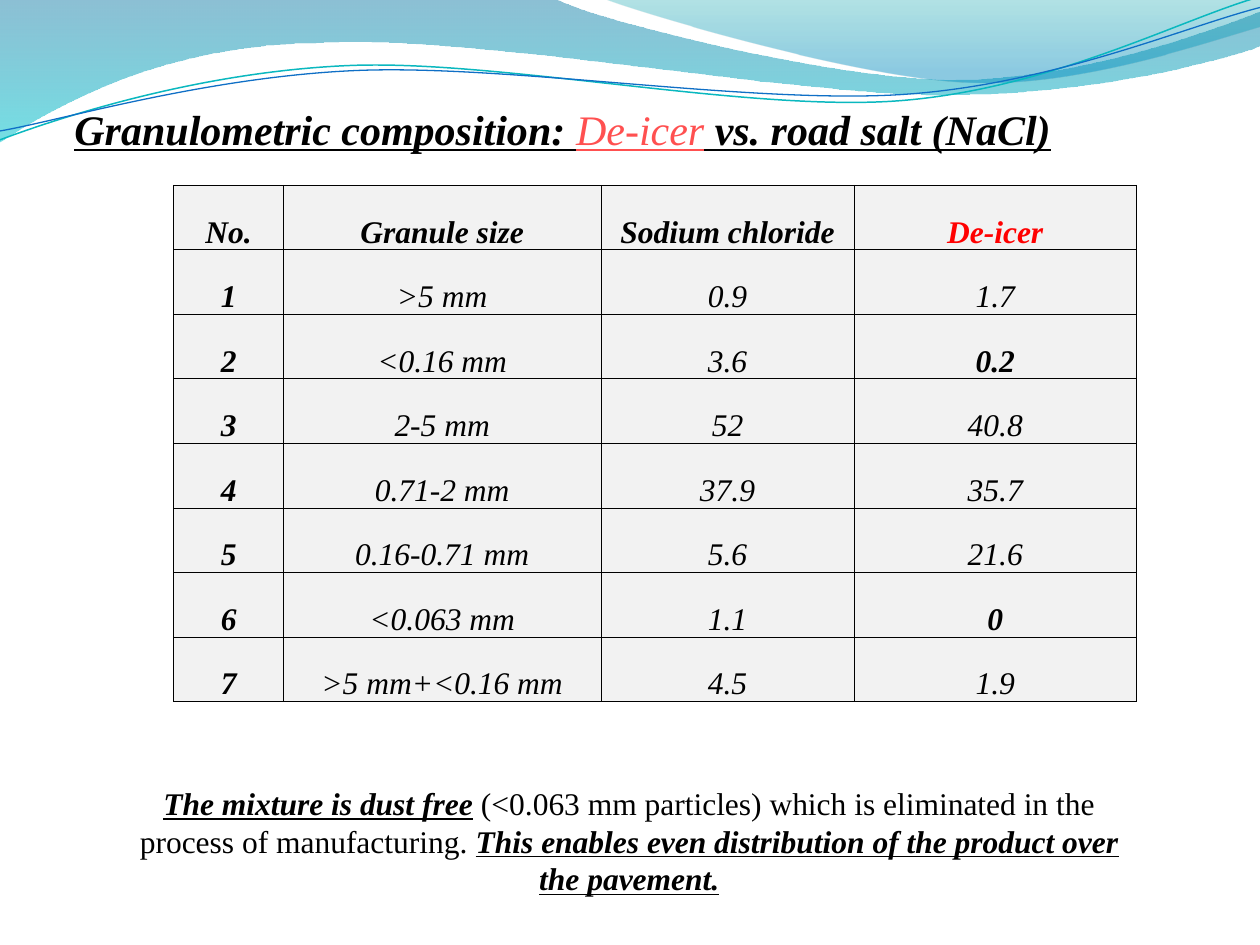
from math import cos, radians, sin

from lxml.etree import SubElement
from pptx import Presentation
from pptx.dml.color import RGBColor
from pptx.enum.text import MSO_ANCHOR, PP_ALIGN
from pptx.oxml import parse_xml
from pptx.oxml.ns import nsdecls, qn
from pptx.util import Inches, Pt

FONT = "Times New Roman"
BLACK = "000000"
LINE_TILT = 2.7  # degrees by which the wave lines rise to the right

# Wave outlines in inches: start point, then lines (x, y) and cubic curves (six values)
LEFT_WAVE = [(0, -0.01), (4.4, -0.01), (4.76, 0.17, 6.64, 0.63, 7.58, 0.63),
             (8.53, 0.63, 9.58, 0.26, 10, 0.09), (10.01, 0.36),
             (9.83, 0.44, 8.7, 0.76, 7.46, 0.75), (6.22, 0.75, 3.82, 0.28, 2.57, 0.34),
             (1.29, 0.35, 0.46, 0.83, -0.01, 1.13), (0, -0.01)]
RIGHT_WAVE = [(4.79, -0.01), (5.09, 0.11, 6.82, 0.62, 7.69, 0.65),
              (8.56, 0.69, 9.61, 0.32, 10, 0.21), (10, 0), (4.79, -0.01)]
TEAL_LINE = [(0, 1.11), (0.48, 0.93, 1.58, 0.57, 2.77, 0.52),
             (3.95, 0.47, 5.93, 0.89, 7.13, 0.8), (8.33, 0.71, 9.38, 0.15, 9.98, -0.02)]
BLUE_LINE = [(0, 1.04), (0.47, 0.96, 1.64, 0.61, 2.83, 0.56),
             (4.03, 0.51, 5.97, 0.83, 7.17, 0.75), (8.36, 0.67, 9.41, 0.21, 10, 0.06)]

GRANULES = [
    ("No.", "Granule size", "Sodium chloride", "De-icer"),
    ("1", ">5 mm", "0.9", "1.7"),
    ("2", "<0.16 mm", "3.6", "0.2"),
    ("3", "2-5 mm", "52", "40.8"),
    ("4", "0.71-2 mm", "37.9", "35.7"),
    ("5", "0.16-0.71 mm", "5.6", "21.6"),
    ("6", "<0.063 mm", "1.1", "0"),
    ("7", ">5 mm+<0.16 mm", "4.5", "1.9"),
]
COLUMN_WIDTHS = (0.87, 2.52, 2.01, 2.24)
DUST_RESULTS = {(2, 3), (6, 3)}


def color(hex_string):
    return RGBColor.from_string(hex_string)


def add_run(paragraph, text, size, hex_string=BLACK, bold=False, italic=False, underline=False):
    run = paragraph.add_run()
    run.text = text
    font = run.font
    font.name, font.size = FONT, Pt(size)
    font.bold, font.italic, font.underline = bold, italic, underline
    font.color.rgb = color(hex_string)


def level(outline, center_x, center_y):
    """Turn an outline clockwise by the tilt, so that it lies level in its box."""
    c, s = cos(radians(LINE_TILT)), sin(radians(LINE_TILT))
    turned = []
    for segment in outline:
        values = []
        for x, y in zip(segment[::2], segment[1::2]):
            dx, dy = x - center_x, y - center_y
            values += [center_x + dx * c - dy * s, center_y + dx * s + dy * c]
        turned.append(tuple(values))
    return turned


def add_outline(shapes, outline, close):
    points = [(Inches(x), Inches(y)) for segment in outline
              for x, y in zip(segment[::2], segment[1::2])]
    builder = shapes.build_freeform(*points[0], scale=1.0)
    builder.add_line_segments(points[1:], close=close)
    shape = builder.convert_to_shape()
    # Join each three points of a curve into one cubic segment
    lines = iter(list(shape.element.iter(qn("a:lnTo"))))
    for segment in outline[1:]:
        line = next(lines)
        if len(segment) == 6:
            line.tag = qn("a:cubicBezTo")
            for other in (next(lines), next(lines)):
                line.append(other[0])
                other.getparent().remove(other)
    shape.shadow.inherit = False
    shape.fill.background()
    shape.line.fill.background()
    return shape


def add_wave(shapes, outline, stops):
    shape = add_outline(shapes, outline, close=True)
    stop_xml = "".join(
        f'<a:gs pos="{position * 1000}"><a:srgbClr val="{hex_string}">'
        f'<a:alpha val="{opacity * 1000}"/></a:srgbClr></a:gs>'
        for position, hex_string, opacity in stops)
    gradient = parse_xml(f'<a:gradFill {nsdecls("a")} rotWithShape="1"><a:gsLst>{stop_xml}'
                         '</a:gsLst><a:lin ang="5400000" scaled="0"/></a:gradFill>')
    properties = shape.element.spPr
    properties.replace(properties.find(qn("a:noFill")), gradient)


def add_wave_line(shapes, outline, center_x, center_y, hex_string, width):
    shape = add_outline(shapes, level(outline, center_x, center_y), close=False)
    shape.rotation = 360 - LINE_TILT
    shape.line.color.rgb = color(hex_string)
    shape.line.width = Pt(width)


def add_header_waves(slide):
    add_wave(slide.shapes, LEFT_WAVE, [(0, "0074A1", 45), (100, "00C6CF", 55)])
    add_wave(slide.shapes, RIGHT_WAVE, [(0, "00A1A9", 30), (80, "008BBF", 45)])
    group = slide.shapes.add_group_shape()
    add_wave_line(group.shapes, TEAL_LINE, 4.99, 0.575, "0AB8BF", 0.85)
    add_wave_line(group.shapes, BLUE_LINE, 5, 0.59, "0F6FC6", 0.75)


def place_title(slide, left, top, width, height):
    title = slide.shapes.title
    slide.shapes.element.append(title.element)  # in front of the waves
    title.left, title.top, title.width, title.height = left, top, width, height
    frame = title.text_frame
    frame.word_wrap = True
    frame.vertical_anchor = MSO_ANCHOR.BOTTOM
    frame.margin_left = frame.margin_right = 0
    frame.margin_top, frame.margin_bottom = Inches(0.05), Inches(0.4)
    paragraph = frame.paragraphs[0]
    paragraph.alignment = PP_ALIGN.LEFT
    style = dict(italic=True, underline=True)
    add_run(paragraph, "Granulometric composition: ", 24, bold=True, **style)
    add_run(paragraph, "De-icer", 24, hex_string="FF5050", **style)
    add_run(paragraph, " vs. road salt (NaCl)", 24, bold=True, **style)


def add_cell_borders(cell, hex_string, width):
    properties = cell._tc.get_or_add_tcPr()
    for side in ("a:lnL", "a:lnR", "a:lnT", "a:lnB"):
        line = SubElement(properties, qn(side), w=str(Pt(width)))
        fill = SubElement(line, qn("a:solidFill"))
        SubElement(fill, qn("a:srgbClr"), val=hex_string)


def add_granule_table(slide, left, top, width, height):
    frame = slide.shapes.add_table(len(GRANULES), len(COLUMN_WIDTHS), left, top, width, height)
    table = frame.table
    table.first_row = table.horz_banding = False
    for column, column_width in zip(table.columns, COLUMN_WIDTHS):
        column.width = Inches(column_width)
    for i, values in enumerate(GRANULES):
        for j, value in enumerate(values):
            cell = table.cell(i, j)
            add_cell_borders(cell, BLACK, 0.5)
            cell.fill.solid()
            cell.fill.fore_color.rgb = color("F2F2F2")
            cell.vertical_anchor = MSO_ANCHOR.BOTTOM
            cell.margin_left = cell.margin_right = cell.margin_top = Inches(0.01)
            cell.margin_bottom = 0
            paragraph = cell.text_frame.paragraphs[0]
            paragraph.alignment = PP_ALIGN.CENTER
            add_run(paragraph, value, 18, italic=True,
                    hex_string="FF0000" if (i, j) == (0, 3) else BLACK,
                    bold=i == 0 or j == 0 or (i, j) in DUST_RESULTS)


def add_conclusion(slide, left, top, width, height):
    frame = slide.shapes.add_textbox(left, top, width, height).text_frame
    frame.word_wrap = True
    frame.vertical_anchor = MSO_ANCHOR.MIDDLE
    frame.margin_top = Inches(0.37)
    paragraph = frame.paragraphs[0]
    paragraph.alignment = PP_ALIGN.CENTER
    emphasis = dict(bold=True, italic=True, underline=True)
    add_run(paragraph, "The mixture is dust free", 18, **emphasis)
    add_run(paragraph, " ", 18, italic=True)
    add_run(paragraph, "(<0.063 mm particles) which is eliminated in the process "
                       "of manufacturing. ", 18)
    add_run(paragraph, "This enables even distribution of the product over the pavement.",
            18, **emphasis)


def main():
    presentation = Presentation()
    presentation.slide_width, presentation.slide_height = Inches(10), Inches(7.5)
    slide = presentation.slides.add_slide(presentation.slide_layouts[5])
    add_header_waves(slide)
    place_title(slide, Inches(0.59), Inches(0.52), Inches(8.82), Inches(1.1))
    add_granule_table(slide, Inches(1.38), Inches(1.47), Inches(7.64), Inches(4.1))
    add_conclusion(slide, Inches(0.98), Inches(5.8), Inches(8.03), Inches(1.42))
    presentation.save("out.pptx")


if __name__ == "__main__":
    main()
